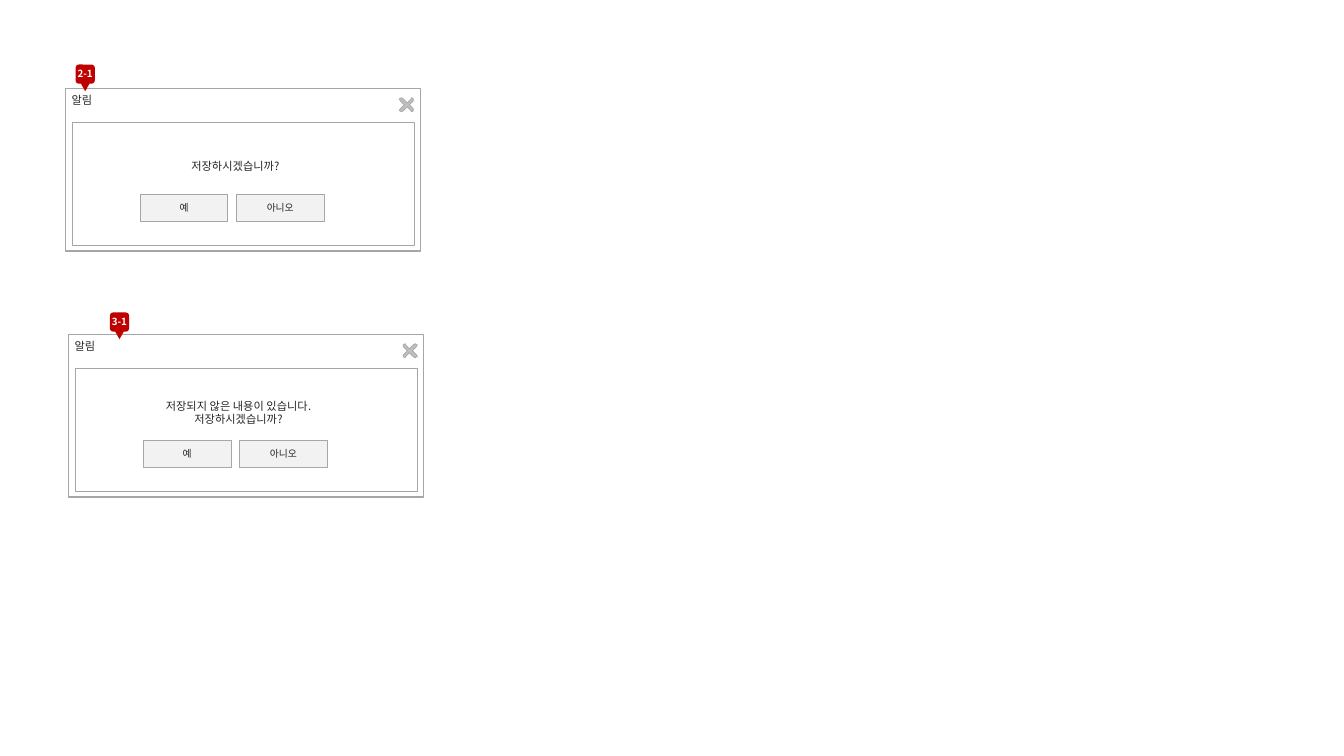
from pptx import Presentation, util as u
from pptx.dml.color import RGBColor
from pptx.enum import shapes, text
from pptx.oxml.ns import qn

# Slide grid: 1333 columns by 750 rows
deck = Presentation()
deck.slide_width, deck.slide_height = u.Inches(13.33), u.Inches(7.5)
slide = deck.slides.add_slide(deck.slide_layouts[6])
unit = deck.slide_height // 750

KIND = shapes.MSO_SHAPE
MID, TOP = text.MSO_ANCHOR.MIDDLE, text.MSO_ANCHOR.TOP
MIDDLE, LEFT = text.PP_ALIGN.CENTER, text.PP_ALIGN.LEFT
FONT = "Noto Sans CJK KR"
GREY, INK, RED = "A6A6A6", "262626", "C00000"


def paint(shape, fill, line=None, width=0):
    shape.shadow.inherit = False
    shape.fill.solid()
    shape.fill.fore_color.rgb = RGBColor.from_string(fill)
    if line:
        shape.line.color.rgb = RGBColor.from_string(line)
        shape.line.width = u.Pt(width)
    else:
        shape.line.fill.background()


def write(shape, words, size, color=INK, bold=False, align=MIDDLE,
          anchor=MID, wrap=True, pad=(6, 3)):
    frame = shape.text_frame
    frame.text = words
    side, edge = (n * unit for n in pad)
    look = {"word_wrap": wrap, "vertical_anchor": anchor,
            "margin_left": side, "margin_right": side,
            "margin_top": edge, "margin_bottom": edge}
    for key, val in look.items():
        setattr(frame, key, val)
    for para in frame.paragraphs:
        para.alignment = align
        for run in para.runs:
            face = {"name": FONT, "size": u.Pt(size), "bold": bold}
            for key, val in face.items():
                setattr(run.font, key, val)
            run.font.color.rgb = RGBColor.from_string(color)
            # Korean glyphs take the East Asian font
            east = run.font._element.makeelement(qn("a:ea"), {"typeface": FONT})
            run.font._element.append(east)


# One arm of the close mark, measured from its centre
arm = [(0, 2.5), (4, 6), (5, 6.8), (6.3, 6.3), (7, 5.5), (6.3, 4), (2.5, 0)]
cross = []
for sx, sy, step in [(1, 1, 1), (1, -1, -1), (-1, -1, 1), (-1, 1, -1)]:
    cross += [(sx * x, sy * y) for x, y in arm[::step]]

# Dialogs: left, top, message, badge label, badge left and top
dialogs = [
    (65, 88, "저장하시겠습니까?", "2-1", 75, 64),
    (68, 332, "저장되지 않은 내용이 있습니다.\n저장하시겠습니까?", "3-1", 109, 310),
]

for left, top, note, label, bx, by in dialogs:
    # Window and inner panel
    for x, y, w, h, width in [(0, 0, 352, 161, 1), (7, 33.5, 339, 122, 0.75)]:
        box = [int(n * unit) for n in (left + x, top + y, w, h)]
        paint(slide.shapes.add_shape(KIND.RECTANGLE, *box), "FFFFFF", GREY, width)

    # Buttons
    for col, word in enumerate(["예", "아니오"]):
        box = [int(n * unit) for n in (left + 74 + 95.5 * col, top + 104.5, 87, 27)]
        button = slide.shapes.add_shape(KIND.ROUNDED_RECTANGLE, *box)
        button.adjustments[0] = 0
        paint(button, "F2F2F2", GREY, 0.5)
        write(button, word, 7, wrap=False, pad=(10, 5))

    # Close mark
    dots = [(left + 338.5 + x, top + 16 + y) for x, y in cross]
    path = slide.shapes.build_freeform(*dots[0], scale=unit)
    path.add_line_segments(dots[1:], close=True)
    paint(path.convert_to_shape(), "BFBFBF", GREY, 0.5)

    # Message and title
    for x, y, w, h, words, align, anchor in [
        (11, 49.5, 315, 55, note, MIDDLE, MID),
        (0, 2, 47, 21, "알림", LEFT, TOP),
    ]:
        box = [int(n * unit) for n in (left + x, top + y, w, h)]
        write(slide.shapes.add_textbox(*box), words, 8, align=align, anchor=anchor)

    # Numbered badge
    badge = slide.shapes.add_group_shape().shapes
    for kind, x, y, w, h, turn in [
        (KIND.ISOSCELES_TRIANGLE, 5, 18.5, 9, 8, 180),
        (KIND.ROUNDED_RECTANGLE, 0, 0, 19, 19, 0),
    ]:
        box = [int(n * unit) for n in (bx + x, by + y, w, h)]
        part = badge.add_shape(kind, *box)
        part.rotation = turn
        paint(part, RED)
    tag = badge.add_textbox(*[n * unit for n in (bx - 4, by - 2, 27, 22)])
    write(tag, label, 7, "FFFFFF", True, anchor=TOP, pad=(5, 5))
    tag.text_frame.auto_size = text.MSO_AUTO_SIZE.SHAPE_TO_FIT_TEXT

deck.save("out.pptx")
